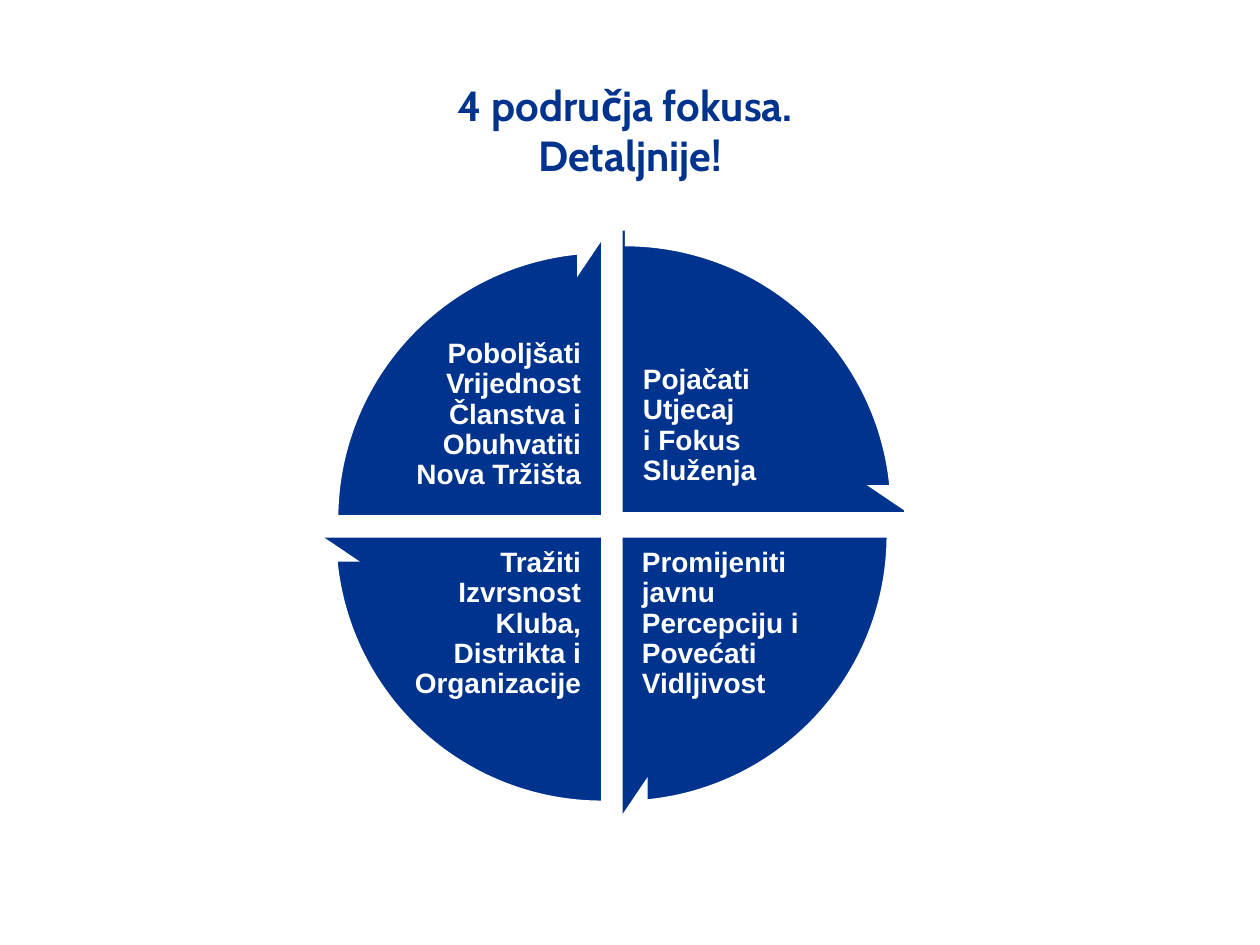
from pptx import Presentation, util as u
from pptx.dml.color import RGBColor
from pptx.enum import shapes, text

PX = u.Inches(1) / 126
BLUE = RGBColor(0x00, 0x33, 0x8D)
WHITE = RGBColor(0xFF, 0xFF, 0xFF)

PIE, RING = 570, 640      # diameters
TURN, HEAD = 54, 3.27     # quarter turn and arrow head, in units of 100000/60000 degrees
LEFT, RIGHT = text.PP_ALIGN.LEFT, text.PP_ALIGN.RIGHT

# Clockwise from top right: pie corner, ring corner, label corner, alignment, lines
PARTS = [
    ((18, 0), (-13, -37), (322, 119), LEFT,
     ["Pojačati", "Utjecaj", "i Fokus", "Služenja"]),
    ((18, 22), (-17, -14), (321, 317), LEFT,
     ["Promijeniti javnu Percepciju i", "Povećati", "Vidljivost"]),
    ((0, 22), (-36, -14), (56, 317), RIGHT,
     ["Tražiti Izvrsnost", "Kluba,", "Distrikta i Organizacije"]),
    ((0, 3), (-34, -30), (56, 108), RIGHT,
     ["Poboljšati", "Vrijednost Članstva i", "Obuhvatiti", "Nova Tržišta"]),
]


def emu(*px):
    return [u.Emu(round(n * PX)) for n in px]


def write(frame, lines, font, size, color, align, anchor, gap=None, inset=None):
    frame.word_wrap = True
    frame.auto_size = text.MSO_AUTO_SIZE.NONE
    frame.vertical_anchor = anchor
    if inset is not None:
        pad, = emu(inset)
        frame.margin_left = frame.margin_right = pad
        frame.margin_top = frame.margin_bottom = pad
    for i, line in enumerate(lines):
        para = frame.add_paragraph() if i else frame.paragraphs[0]
        para.text = line
        para.alignment = align
        para.line_spacing = gap
        for run in para.runs:
            run.font.name = font
            run.font.size = u.Pt(size)
            run.font.bold = True
            run.font.color.rgb = color


def shape(slide, kind, x, y, size, fill, line, turns):
    item = slide.shapes.add_shape(kind, *emu(x, y, size, size))
    item.shadow.inherit = False
    item.fill.solid()
    item.fill.fore_color.rgb = fill
    if line:
        item.line.color.rgb = line
        item.line.width = u.Pt(2)
    else:
        item.line.fill.background()
    for i, turn in enumerate(turns):
        item.adjustments[i] = turn


def title(slide, x, y, w, h):
    head = slide.shapes.title
    head.left, head.top, head.width, head.height = emu(x, y, w, h)
    write(head.text_frame, ["4 područja fokusa. \vDetaljnije!"], "Cabin", 24,
          BLUE, text.PP_ALIGN.CENTER, text.MSO_ANCHOR.TOP)


def wheel(slide, x, y):
    """Four labelled quarters, trimmed by white arrows laid over their rims."""
    starts = [(3 + i) % 4 * TURN for i in range(4)]
    for start, (pie, _, label, align, lines) in zip(starts, PARTS):
        shape(slide, shapes.MSO_SHAPE.PIE, x + pie[0], y + pie[1], PIE,
              BLUE, WHITE, [start, (start + TURN) % (4 * TURN)])
        box = slide.shapes.add_textbox(*emu(x + label[0], y + label[1], 210, 156))
        write(box.text_frame, lines, "Arial", 16, WHITE, align,
              text.MSO_ANCHOR.MIDDLE, gap=0.9, inset=3)
    for start, (_, ring, *_) in zip(starts, PARTS):
        shape(slide, shapes.MSO_SHAPE.CIRCULAR_ARROW, x + ring[0], y + ring[1], RING,
              WHITE, None, [0.05, HEAD, start + TURN - HEAD, start, 0.06])


def main():
    deck = Presentation()
    deck.slide_width, deck.slide_height = emu(1260, 945)
    slide = deck.slides.add_slide(deck.slide_layouts[5])
    title(slide, 42, 73, 1176, 179)
    wheel(slide, 318, 229)
    deck.save("out.pptx")


if __name__ == "__main__":
    main()
